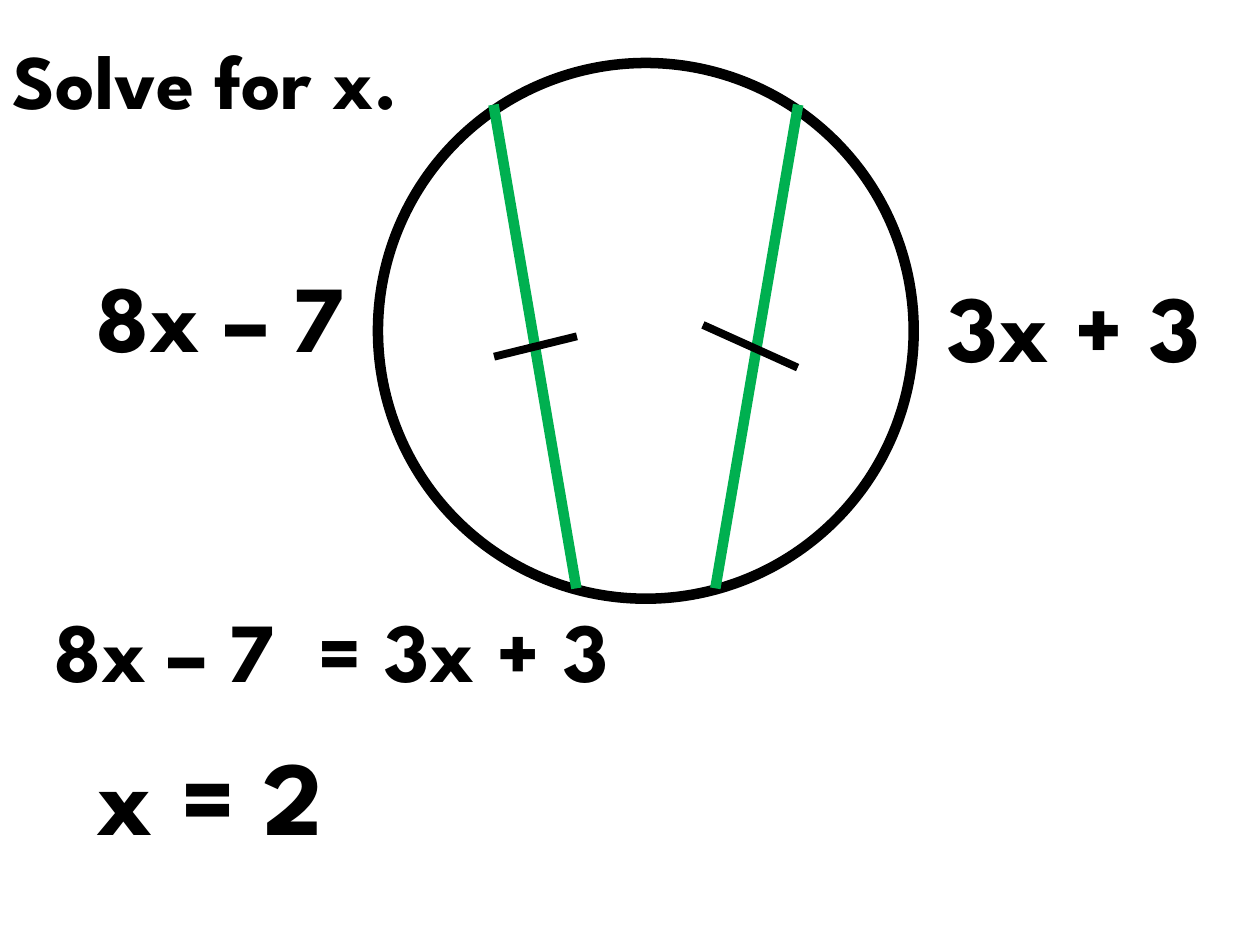
from dataclasses import dataclass

from lxml.etree import SubElement
from pptx import Presentation
from pptx.dml.color import RGBColor
from pptx.enum.shapes import MSO_CONNECTOR as Connector, MSO_SHAPE as Shape
from pptx.enum.text import MSO_ANCHOR as Anchor, MSO_AUTO_SIZE as AutoSize
from pptx.oxml.ns import qn
from pptx.util import Cm, Pt


@dataclass(frozen=True)
class Theme:
    font: str = "League Spartan"
    ink: RGBColor = RGBColor(0x00, 0x00, 0x00)
    chord: RGBColor = RGBColor(0x00, 0xB0, 0x50)
    thick: float = 6
    tick: float = 4.5
    title: int = 44
    equation: int = 48
    label: int = 54
    answer: int = 60


THEME = Theme()

# Content: all lengths in centimetres
SLIDE_SIZE = (25.4, 19.05)
TITLE = ("Solve for x.", (0, 0, 11.73, 3.18), THEME.title)
EXPRESSIONS = [
    ("8x – 7", (1.7, 5.08, 6.99, 2.57), THEME.label),
    ("3x + 3", (18.85, 5.28, 6.78, 2.57), THEME.label),
    ("8x – 7  = 3x + 3", (0.84, 11.94, 15.24, 2.31), THEME.equation),
    ("x = 2", (1.7, 14.61, 9.32, 2.82), THEME.answer),
]
CIRCLE = (7.62, 1.27, 10.8)  # left, top, diameter
CHORD_TOP, CHORD_BOTTOM = 2.11, 11.86
CHORD_OFFSETS = (3.07, 1.4)  # from the circle's axis, at top and bottom
TICKS = [
    ((9.96, 7.19), (11.63, 6.78)),
    ((14.17, 6.55), (16.08, 7.41)),
]


def add_line(slide, start, end, color, width):
    points = [Cm(value) for value in (*start, *end)]
    line = slide.shapes.add_connector(Connector.STRAIGHT, *points)
    line.line.color.rgb = color
    line.line.width = Pt(width)
    SubElement(line._element.spPr, qn("a:effectLst"))


def add_text(slide, text, box, size):
    shape = slide.shapes.add_textbox(*[Cm(value) for value in box])
    frame = shape.text_frame
    frame.word_wrap = True
    paragraph = frame.paragraphs[0]
    paragraph.text = text
    font = paragraph.font
    font.name, font.size, font.bold = THEME.font, Pt(size), True
    font.color.rgb = THEME.ink
    return frame


def add_expression(slide, text, box, size):
    frame = add_text(slide, text, box, size)
    frame.auto_size = AutoSize.SHAPE_TO_FIT_TEXT
    # Space before as a share of the type size
    properties = frame.paragraphs[0]._p.get_or_add_pPr()
    space_before = properties.get_or_add_spcBef()
    SubElement(space_before, qn("a:spcPct"), val="50000")


def add_circle(slide):
    left, top, diameter = (Cm(value) for value in CIRCLE)
    circle = slide.shapes.add_shape(Shape.OVAL, left, top, diameter, diameter)
    circle.shadow.inherit = False
    circle.fill.background()
    circle.line.color.rgb = THEME.ink
    circle.line.width = Pt(THEME.thick)


def main():
    presentation = Presentation()
    presentation.slide_width, presentation.slide_height = map(Cm, SLIDE_SIZE)
    slide = presentation.slides.add_slide(presentation.slide_layouts[6])

    # Circle with two mirrored chords
    add_circle(slide)
    axis = CIRCLE[0] + CIRCLE[2] / 2
    top_offset, bottom_offset = CHORD_OFFSETS
    for side in (-1, 1):
        add_line(slide, (axis + side * top_offset, CHORD_TOP),
                 (axis + side * bottom_offset, CHORD_BOTTOM),
                 THEME.chord, THEME.thick)

    # Tick marks for equal chords
    for start, end in TICKS:
        add_line(slide, start, end, THEME.ink, THEME.tick)

    # Title, chord labels and solution
    add_text(slide, *TITLE).vertical_anchor = Anchor.MIDDLE
    for expression in EXPRESSIONS:
        add_expression(slide, *expression)

    presentation.save("out.pptx")


if __name__ == "__main__":
    main()
